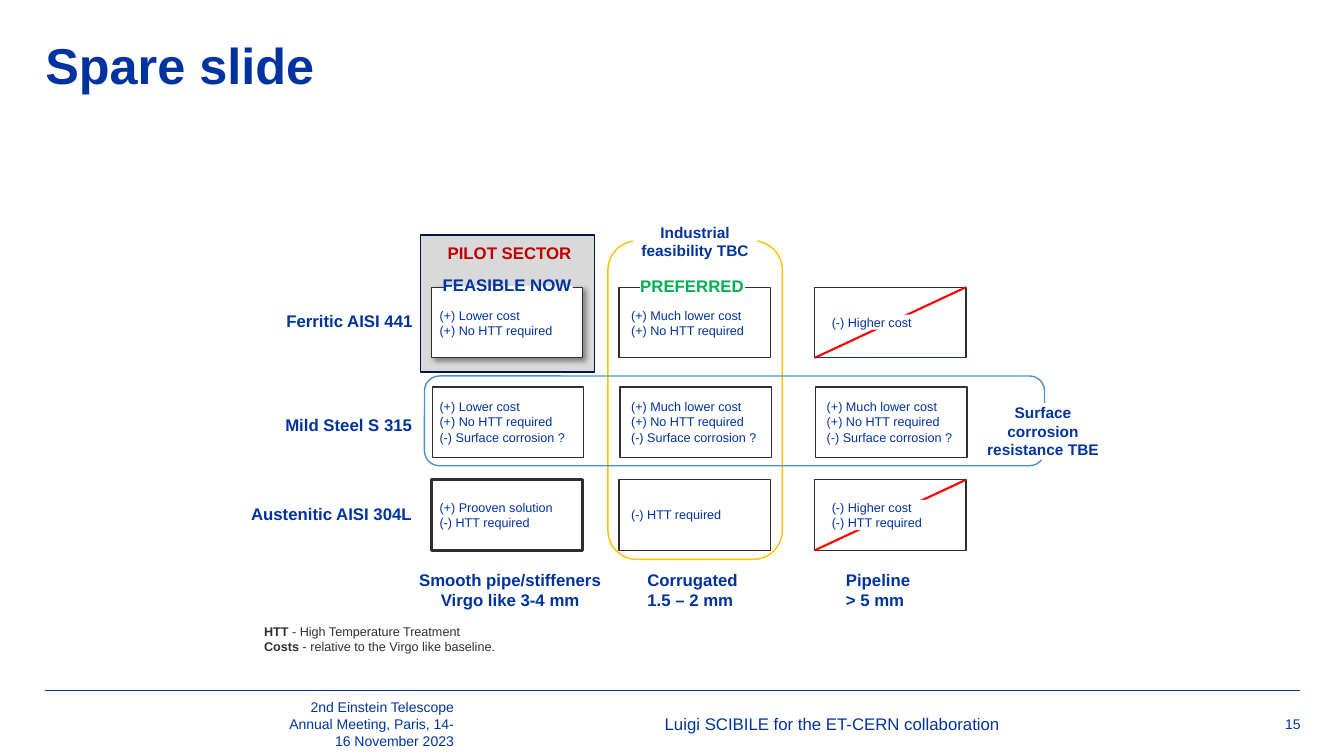
from lxml.etree import SubElement
from pptx import Presentation
from pptx.dml.color import RGBColor
from pptx.enum.shapes import MSO_CONNECTOR, MSO_SHAPE
from pptx.enum.text import MSO_ANCHOR, PP_ALIGN
from pptx.oxml.ns import qn
from pptx.util import Pt

PX = 9144  # 100 px to the inch
HUES = {
    "blue": "0033A0", "navy": "001646", "sky": "4D90D0", "dark": "2F2F2F",
    "grey": "D9D9D9", "white": "FFFFFF", "red": "FF0000", "brick": "C00000",
    "green": "00B050", "gold": "FFC000",
}
RGB = {name: RGBColor.from_string(code) for name, code in HUES.items()}
LEFT, MID, RIGHT = PP_ALIGN.LEFT, PP_ALIGN.CENTER, PP_ALIGN.RIGHT
RECT, ROUND = MSO_SHAPE.RECTANGLE, MSO_SHAPE.ROUNDED_RECTANGLE
LINE = MSO_CONNECTOR.STRAIGHT

deck = Presentation()
deck.slide_width, deck.slide_height = 1333 * PX, 750 * PX
slide = deck.slides.add_slide(deck.slide_layouts[6])
shapes = slide.shapes


def draw(kind, *spot, fill=None, line=None, width=1):
    """Add a preset shape at (x, y, w, h), or a connector from (x, y) to (x, y)."""
    spot = [n * PX for n in spot]
    if kind is LINE:  # LINE and RECT are equal as numbers
        item = shapes.add_connector(kind, *spot)
        SubElement(item._element.spPr, qn("a:effectLst"))
    else:
        item = shapes.add_shape(kind, *spot)
        item.shadow.inherit = False
        if fill:
            item.fill.solid()
            item.fill.fore_color.rgb = RGB[fill]
        else:
            item.fill.background()
    if line:
        item.line.color.rgb = RGB[line]
        item.line.width = Pt(width)
    else:
        item.line.fill.background()
    return item


def write(text, x, y, w, h, size=12, hue="blue", bold=False, align=LEFT,
          anchor=MSO_ANCHOR.TOP, wrap=True, fill=None, lead=None):
    """Add text, one paragraph a line; ** toggles bold."""
    if fill:
        box = draw(RECT, x, y, w, h, fill=fill)
    else:
        box = shapes.add_textbox(x * PX, y * PX, w * PX, h * PX)
    frame = box.text_frame
    frame.word_wrap = wrap
    frame.vertical_anchor = anchor
    frame.margin_left = frame.margin_right = 0
    frame.margin_top = frame.margin_bottom = 0
    for i, row in enumerate(text.split("\n")):
        para = frame.add_paragraph() if i else frame.paragraphs[0]
        para.alignment = align
        if lead:
            para.line_spacing = lead
        for j, part in enumerate(row.split("**")):
            if part:
                run = para.add_run()
                run.text = part
                run.font.name = "Arial"
                run.font.size = Pt(size)
                run.font.bold = bold or j % 2 == 1
                run.font.color.rgb = RGB[hue]


# Title and footer
draw(LINE, 45, 685, 1289, 685, line="blue", width=0.75)
write("Spare slide", 45, 41, 1244, 117, size=36, bold=True, lead=0.9)
for text, x, w, size, align in [
    ("2nd Einstein Telescope Annual Meeting, Paris, 14-16 November 2023",
     273, 177, 10, RIGHT),
    ("Luigi SCIBILE for the ET-CERN collaboration", 466, 719, 12, MID),
    ("15", 1215, 75, 10, RIGHT),
]:
    write(text, x, 698, w, 40, size=size, align=align, anchor=MSO_ANCHOR.MIDDLE)

# Key
write("**HTT** - High Temperature Treatment\n"
      "**Costs** - relative to the Virgo like baseline.",
      262, 619, 364, 30, size=9, hue="dark")

# Pilot panel
draw(RECT, 417, 233, 173, 136, fill="grey", line="navy")

# Row and column heads
for text, y, w in [("Ferritic AISI 441", 308, 126), ("Mild Steel S 315", 411, 127),
                   ("Austenitic AISI 304L", 500, 161)]:
    write(text, 410 - w, y, w, 20, bold=True, wrap=False)
for text, x, w, align in [
    ("Smooth pipe/stiffeners\nVirgo like 3-4 mm", 415, 182, MID),
    ("Corrugated\n1.5 – 2 mm", 642, 95, LEFT),
    ("Pipeline\n> 5 mm", 839, 74, LEFT),
]:
    write(text, x, 565, w, 40, bold=True, align=align, wrap=False)

# Grid of options
COLS, ROWS, PADS = [428, 614, 808], [285, 384, 476], [8, 12, 12]
WIDE, HIGH = 150, 70
COST, MUCH, HIGHER = "(+) Lower cost", "(+) Much lower cost", "(-) Higher cost"
FREE, HEAT = "\n(+) No HTT required", "(-) HTT required"
RUST = FREE + "\n(-) Surface corrosion ?"
CELLS = [
    [COST + FREE, MUCH + FREE, HIGHER],
    [COST + RUST, MUCH + RUST, MUCH + RUST],
    ["(+) Prooven solution\n" + HEAT, HEAT, HIGHER + "\n" + HEAT],
]
for r, y in enumerate(ROWS):
    for c, left in enumerate(COLS):
        x = left + (r == 1)
        heavy = (r, c) == (2, 0)
        box = draw(RECT, x, y, WIDE, HIGH, fill="white", line="dark",
                   width=2.25 if heavy else 1)
        if (r, c) == (0, 0):
            glow = box._element.spPr.find(qn("a:effectLst"))
            cast = SubElement(glow, qn("a:outerShdw"), blurRad=str(Pt(4)),
                              dist=str(Pt(3)), dir="2700000", algn="tl")
            tint = SubElement(cast, qn("a:srgbClr"), val="000000")
            SubElement(tint, qn("a:alpha"), val="40000")
        # Struck out options
        out = c == 2 and r != 1
        if out:
            draw(LINE, x, y + HIGH, x + WIDE, y, line="red", width=1.5)
        text = CELLS[r][c]
        tall = 15 * (text.count("\n") + 1)
        write(text, left + (17 if out else PADS[c]), y + (HIGH - tall) // 2,
              126, tall, size=9, fill="white" if out else None)
draw(LINE, 809, 355, 957, 355, line="blue", width=0.5)

# Frames and their labels
draw(ROUND, 603, 239, 173, 316, line="gold")
write("Industrial feasibility TBC", 628, 221, 123, 37, size=11, bold=True,
      align=MID, fill="white")
draw(ROUND, 421, 373, 615, 89, line="sky")
write("Surface corrosion resistance TBE", 970, 400, 129, 56, size=11, bold=True,
      align=MID, fill="white")

# Verdicts
write("PREFERRED", 635, 274, 104, 20, hue="green", bold=True, wrap=False, fill="white")
write("PILOT SECTOR", 444, 241, 124, 20, hue="brick", bold=True, wrap=False)
draw(RECT, 442, 282, 126, 14, fill="white")
draw(RECT, 440, 270, 134, 14, fill="grey")
write("FEASIBLE NOW", 439, 273, 129, 20, bold=True, wrap=False)

deck.save("out.pptx")
